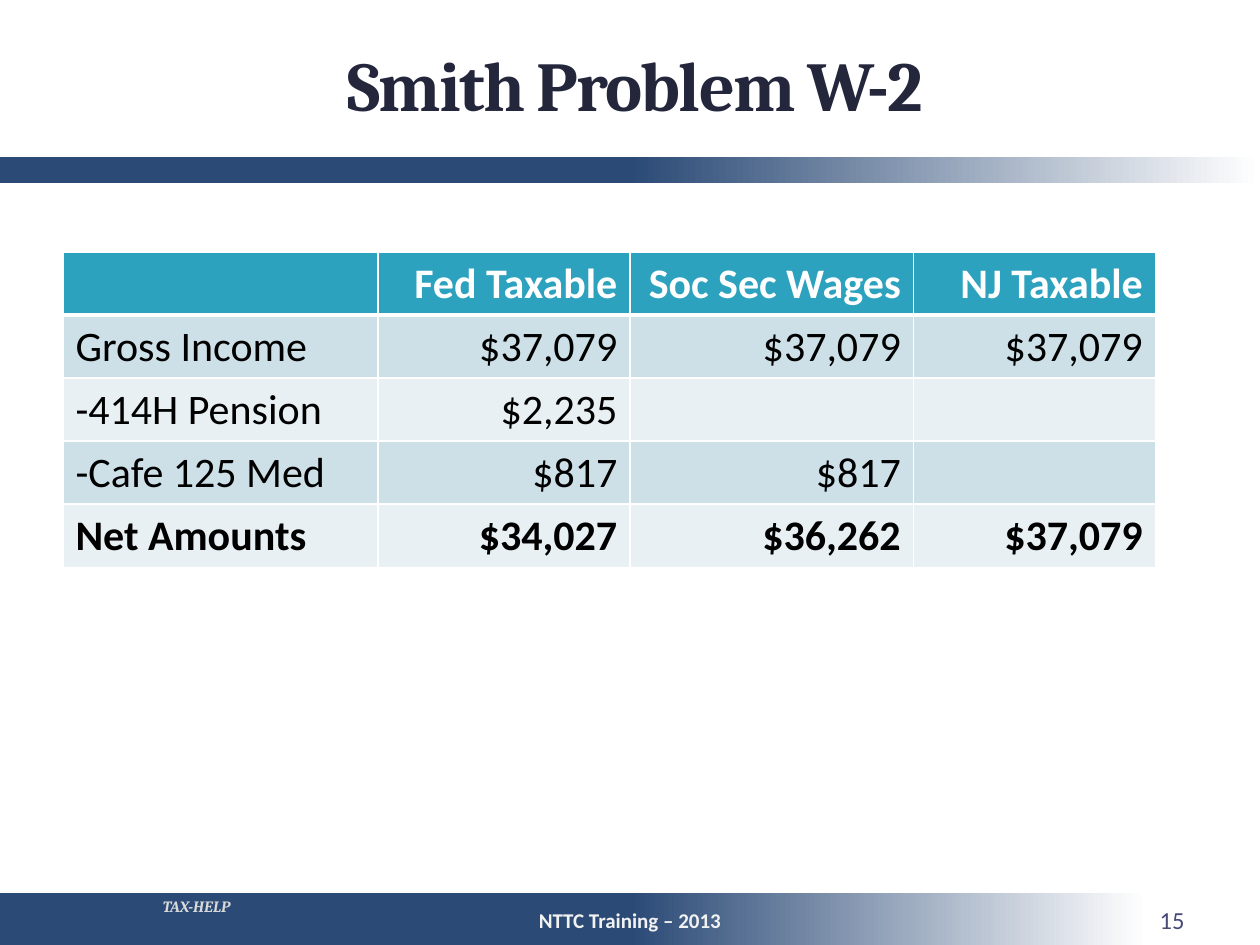
"""Build the Smith Problem W-2 slide."""
import pptx
import pptx.util
import pptx.dml.color
import pptx.enum.shapes
import pptx.enum.text
import pptx.oxml
import pptx.oxml.ns

Pt = pptx.util.Pt
RGBColor = pptx.dml.color.RGBColor
ALIGN = pptx.enum.text.PP_ALIGN
ANCHOR = pptx.enum.text.MSO_ANCHOR

WHITE = RGBColor(0xFF, 0xFF, 0xFF)
BLACK = RGBColor(0, 0, 0)
NAVY = RGBColor(0x2B, 0x4A, 0x76)
INK = RGBColor(0x24, 0x26, 0x3C)
SLATE = RGBColor(0x47, 0x4B, 0x78)
SILVER = RGBColor(0xD9, 0xD9, 0xD9)
PALE = RGBColor(0xF2, 0xF2, 0xF2)
TEAL = RGBColor(0x2D, 0xA2, 0xBF)
BANDS = [RGBColor(0xE8, 0xF0, 0xF4), RGBColor(0xCD, 0xE0, 0xE8)]


def write(frame, text, align, color, form):
    para = frame.paragraphs[0]
    para.alignment = align
    run = para.add_run()
    run.text = text
    run.font.color.rgb = color
    for name, value in form.items():
        setattr(run.font, name, value)
    return run


def edge(cell, side, width):
    line = pptx.oxml.parse_xml(
        f'<a:ln{side} {pptx.oxml.ns.nsdecls("a")} w="{Pt(width)}">'
        f'<a:solidFill><a:srgbClr val="{WHITE}"/></a:solidFill></a:ln{side}>'
    )
    cell._tc.get_or_add_tcPr().append(line)


deck = pptx.Presentation()
deck.slide_width, deck.slide_height = Pt(720), Pt(540)
slide = deck.slides.add_slide(deck.slide_layouts[6])
shapes = slide.shapes

bars = [
    ((352.8, -262.8, 14.4, 720), 90, 270, 0),
    ((0, 510.3, 720, 30), 0, 180, 0.09),
]
for box, turn, angle, start in bars:
    bar = shapes.add_shape(pptx.enum.shapes.MSO_SHAPE.RECTANGLE, *map(Pt, box))
    bar.rotation = turn
    bar.shadow.inherit = False
    bar.line.fill.background()
    bar.fill.gradient()
    bar.fill.gradient_angle = angle
    for stop, color, place in zip(bar.fill.gradient_stops, (WHITE, NAVY), (start, 0.5)):
        stop.color.rgb = color
        stop.position = place

labels = [
    ("TAX-HELP", (92.9, 509, 50.4, 18), 0, ANCHOR.TOP, ALIGN.LEFT, SILVER,
     {"name": "Cambria", "size": Pt(9), "bold": True, "italic": True}, 0),
    ("Smith Problem W-2", (72, 5, 582, 85), 7.2, ANCHOR.MIDDLE, ALIGN.CENTER, INK,
     {"name": "Cambria", "size": Pt(40), "bold": True}, -100),
    ("NTTC Training – 2013", (246, 511.2, 228, 28.8), 7.2, ANCHOR.MIDDLE, ALIGN.CENTER, PALE,
     {"name": "Calibri", "size": Pt(12), "bold": True}, 0),
    ("15", (516, 511.2, 168, 28.8), 7.2, ANCHOR.MIDDLE, ALIGN.RIGHT, SLATE,
     {"name": "Calibri", "size": Pt(14)}, 0),
]
for text, box, inset, anchor, align, color, form, space in labels:
    frame = shapes.add_textbox(*map(Pt, box)).text_frame
    frame.word_wrap = True
    frame.vertical_anchor = anchor
    frame.margin_left = frame.margin_right = Pt(inset)
    run = write(frame, text, align, color, form)
    if space:
        run._r.get_or_add_rPr().set("spc", str(space))

rows = [
    ["", "Fed Taxable", "Soc Sec Wages", "NJ Taxable"],
    ["Gross Income", "$37,079", "$37,079", "$37,079"],
    ["-414H Pension", "$2,235", "", ""],
    ["-Cafe 125 Med", "$817", "$817", ""],
    ["Net Amounts", "$34,027", "$36,262", "$37,079"],
]
widths = [180, 144, 162, 138.24]
grid = shapes.add_table(len(rows), len(widths), Pt(36), Pt(144), Pt(sum(widths)), Pt(180)).table
grid.horz_banding = False
for col, width in zip(grid.columns, widths):
    col.width = Pt(width)
for r, row in enumerate(rows):
    grid.rows[r].height = Pt(34.56 if r else 36)
    head = r == 0
    for c, text in enumerate(row):
        cell = grid.cell(r, c)
        thick = {"L": 1, "R": 1, "T": 3 if r == 1 else 1, "B": 3 if head else 1}
        for side, width in thick.items():
            edge(cell, side, width)
        cell.fill.solid()
        cell.fill.fore_color.rgb = TEAL if head else BANDS[r % 2]
        cell.vertical_anchor = ANCHOR.BOTTOM if head else ANCHOR.TOP
        if text:
            form = {"name": "Calibri", "size": Pt(24), "bold": r in (0, len(rows) - 1)}
            write(cell.text_frame, text, ALIGN.RIGHT if c else ALIGN.LEFT,
                  WHITE if head else BLACK, form)

deck.save("out.pptx")
